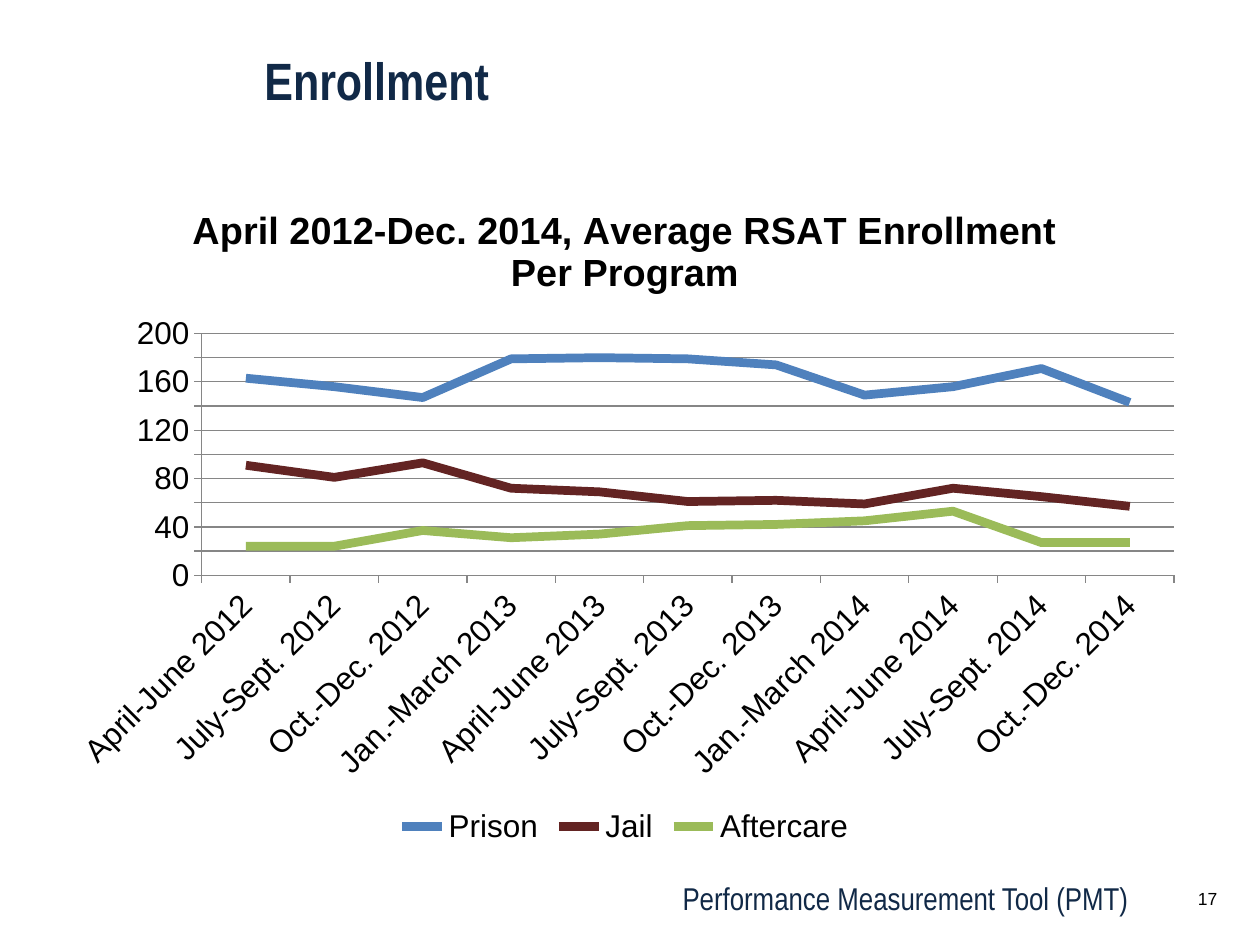
"""Build the enrollment slide with its line chart."""
import pptx
import pptx.chart.data
import pptx.dml.color
import pptx.enum.chart
import pptx.enum.text
import pptx.oxml
import pptx.oxml.ns
import pptx.util
from pptx.util import Cm, Pt

NAVY, BLACK, GRAY = "112947", "000000", "868686"
CATEGORIES = [
    "April-June 2012", "July-Sept. 2012", "Oct.-Dec. 2012",
    "Jan.-March 2013", "April-June 2013", "July-Sept. 2013", "Oct.-Dec. 2013",
    "Jan.-March 2014", "April-June 2014", "July-Sept. 2014", "Oct.-Dec. 2014",
]
SERIES = {
    "Prison": ("4F81BD", [163, 156, 147, 179, 180, 179, 174, 149, 156, 171, 143]),
    "Jail": ("632423", [91, 81, 93, 72, 69, 61, 62, 59, 72, 65, 57]),
    "Aftercare": ("9BBB59", [24, 24, 37, 31, 34, 41, 42, 45, 53, 27, 27]),
}
PLOT_LAYOUT = {"x": 0.13, "y": 0.23, "w": 0.85, "h": 0.36}


def rgb(value):
    return pptx.dml.color.RGBColor.from_string(value)


def apply(obj, values):
    for name, value in values.items():
        setattr(obj, name, value)


def style_font(font, color, **values):
    apply(font, values)
    font.color.rgb = rgb(color)


def style_line(line, color, width):
    line.color.rgb = rgb(color)
    line.width = Pt(width)


def add_text(s, box, text, color, font, frame=None, paragraph=None):
    sp = s.shapes.add_textbox(*map(Cm, box))
    tf = sp.text_frame
    apply(tf, {"word_wrap": True, **(frame or {})})
    p = tf.paragraphs[0]
    apply(p, paragraph or {})
    r = p.add_run()
    r.text = text
    style_font(r.font, color, **font)


def set_plot_layout(chart):
    plot_area = chart._chartSpace.chart.plotArea
    for old in plot_area.findall(pptx.oxml.ns.qn("c:layout")):
        plot_area.remove(old)
    modes = '<c:xMode val="edge"/><c:yMode val="edge"/>'
    sizes = "".join(f'<c:{k} val="{v}"/>' for k, v in PLOT_LAYOUT.items())
    plot_area.insert(0, pptx.oxml.parse_xml(
        f'<c:layout {pptx.oxml.ns.nsdecls("c")}><c:manualLayout>'
        f'<c:layoutTarget val="inner"/>{modes}{sizes}</c:manualLayout></c:layout>'))


def style_axes(chart):
    outside = pptx.enum.chart.XL_TICK_MARK.OUTSIDE
    none = pptx.enum.chart.XL_TICK_MARK.NONE
    for axis in (chart.category_axis, chart.value_axis):
        apply(axis, {"major_tick_mark": outside, "minor_tick_mark": none})
        style_font(axis.tick_labels.font, BLACK, name="Arial", size=Pt(18))
        style_line(axis.format.line, GRAY, 0.75)
    labels = chart.category_axis._element.find(pptx.oxml.ns.qn("c:txPr"))
    labels.find(pptx.oxml.ns.qn("a:bodyPr")).set("rot", "-2700000")
    axis = chart.value_axis
    apply(axis, {"minimum_scale": 0, "maximum_scale": 200, "major_unit": 20,
                 "has_major_gridlines": True})
    apply(axis.tick_labels, {"number_format": "#,##0",
                             "number_format_is_linked": False})
    style_line(axis.major_gridlines.format.line, GRAY, 0.75)


def add_line_chart(s, box, title):
    data = pptx.chart.data.CategoryChartData(number_format="#,##0")
    data.categories = CATEGORIES
    for name, (_, values) in SERIES.items():
        data.add_series(name, values)
    chart = s.shapes.add_chart(
        pptx.enum.chart.XL_CHART_TYPE.LINE, *map(Cm, box), data).chart
    style_font(chart.font, BLACK, name="Arial", size=Pt(18))
    apply(chart, {"has_title": True, "has_legend": True})
    p = chart.chart_title.text_frame.paragraphs[0]
    r = p.add_run()
    r.text = title
    style_font(r.font, BLACK, name="Arial", size=Pt(21.6), bold=True)
    apply(chart.legend, {"position": pptx.enum.chart.XL_LEGEND_POSITION.BOTTOM,
                         "include_in_layout": False})
    chart.plots[0].vary_by_categories = False
    for series, (color, _) in zip(chart.plots[0].series, SERIES.values()):
        series.smooth = False
        series.marker.style = pptx.enum.chart.XL_MARKER_STYLE.NONE
        style_line(series.format.line, color, 5)
    style_axes(chart)
    set_plot_layout(chart)


def main():
    prs = pptx.Presentation()
    apply(prs, {"slide_width": Cm(25.4), "slide_height": Cm(19.05)})
    s = prs.slides.add_slide(prs.slide_layouts[6])
    right = {"alignment": pptx.enum.text.PP_ALIGN.RIGHT}
    add_text(s, (10.6, 17.6, 12.4, 1.02), "Performance Measurement Tool (PMT)",
             NAVY, {"name": "Arial Narrow", "size": Pt(18)}, paragraph=right)
    add_text(s, (23.85, 17.78, 0.94, 0.69), "17", BLACK,
             {"name": "Arial", "size": Pt(10)}, {"word_wrap": False}, right)
    add_text(s, (5.08, 1.09, 17.98, 1.27), "Enrollment", NAVY,
             {"name": "Arial Narrow", "size": Pt(30), "bold": True},
             {"vertical_anchor": pptx.enum.text.MSO_ANCHOR.BOTTOM},
             {"line_spacing": Pt(31)})
    add_line_chart(s, (1.07, 3.61, 23.06, 13.54),
                   "April 2012-Dec. 2014, Average RSAT Enrollment Per Program")
    prs.save("out.pptx")


if __name__ == "__main__":
    main()
